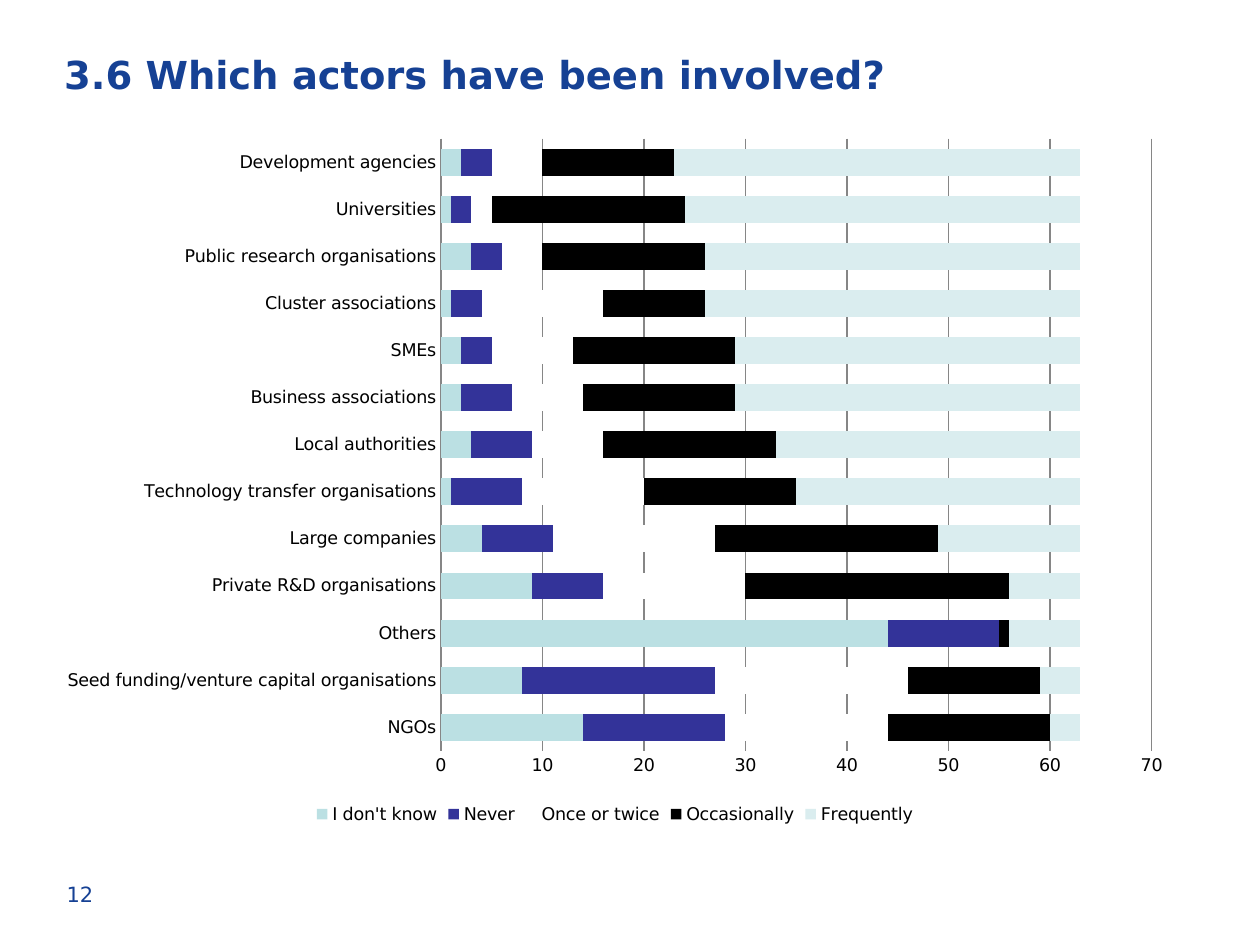
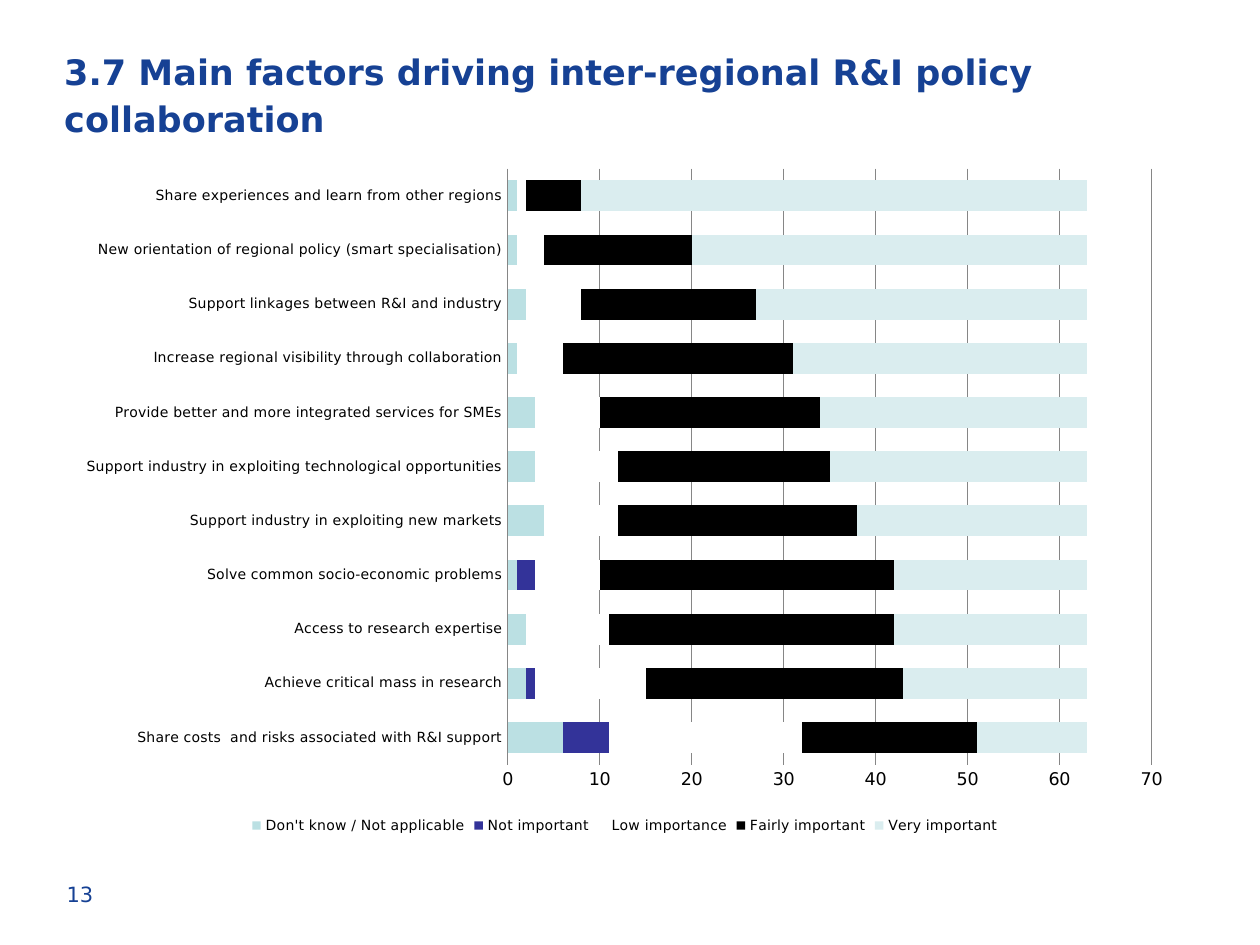
"""Build two survey slides with stacked bar charts on actors and policy drivers."""
from dataclasses import dataclass

import lxml.etree
import pptx
import pptx.chart.data
import pptx.dml.color
import pptx.enum.chart
import pptx.enum.text
import pptx.oxml
import pptx.oxml.ns
import pptx.util

Inches = pptx.util.Inches
Pt = pptx.util.Pt
RGB = pptx.dml.color.RGBColor.from_string


@dataclass(frozen=True)
class Theme:
    font: str = "DejaVu Sans"
    heading: str = "164194"
    text: str = "000000"
    grid: str = "868686"
    answers: tuple = ("BBE0E3", "333399", "FFFFFF", "000000", "DAEDEF")
    number_size: int = 12
    chart_size: int = 10


theme = Theme()


def write(shape, text, size, bold=False, line_spacing=None, side_inset=0,
          anchor=pptx.enum.text.MSO_ANCHOR.TOP):
    frame = shape.text_frame
    frame.word_wrap = True
    frame.auto_size = pptx.enum.text.MSO_AUTO_SIZE.NONE
    frame.vertical_anchor = anchor
    frame.margin_left = frame.margin_right = Inches(side_inset)
    frame.margin_top = frame.margin_bottom = 0
    paragraph = frame.paragraphs[0]
    paragraph.alignment = pptx.enum.text.PP_ALIGN.LEFT
    paragraph.line_spacing = line_spacing
    run = paragraph.add_run()
    run.text = text
    run.font.name = theme.font
    run.font.size = Pt(size)
    run.font.bold = bold
    run.font.color.rgb = RGB(theme.heading)


questions = [
    dict(
        number="12",
        title="3.6 Which actors have been involved?",
        title_size=22,
        label_size=10,
        frame=(0.35, 0.99, 9.06, 5.59),
        plot=(3.5, 1.1, 5.64, 4.86),
        answers=["I don't know", "Never", "Once or twice", "Occasionally", "Frequently"],
        rows=[
            ("NGOs", 14, 14, 16, 16, 3),
            ("Seed funding/venture capital organisations", 8, 19, 19, 13, 4),
            ("Others", 44, 11, None, 1, 7),
            ("Private R&D organisations", 9, 7, 14, 26, 7),
            ("Large companies", 4, 7, 16, 22, 14),
            ("Technology transfer organisations", 1, 7, 12, 15, 28),
            ("Local authorities", 3, 6, 7, 17, 30),
            ("Business associations", 2, 5, 7, 15, 34),
            ("SMEs", 2, 3, 8, 16, 34),
            ("Cluster associations", 1, 3, 12, 10, 37),
            ("Public research organisations", 3, 3, 4, 16, 37),
            ("Universities", 1, 2, 2, 19, 39),
            ("Development agencies", 2, 3, 5, 13, 40),
        ],
    ),
    dict(
        number="13",
        title="3.7 Main factors driving inter-regional R&I policy collaboration",
        title_size=20,
        label_size=8,
        frame=(0.51, 1.23, 8.9, 5.43),
        plot=(4.03, 1.34, 5.11, 4.73),
        answers=["Don't know / Not applicable", "Not important", "Low importance",
                 "Fairly important", "Very important"],
        rows=[
            ("Share costs  and risks associated with R&I support", 6, 5, 21, 19, 12),
            ("Achieve critical mass in research", 2, 1, 12, 28, 20),
            ("Access to research expertise", 2, None, 9, 31, 21),
            ("Solve common socio-economic problems", 1, 2, 7, 32, 21),
            ("Support industry in exploiting new markets", 4, None, 8, 26, 25),
            ("Support industry in exploiting technological opportunities", 3, None, 9, 23, 28),
            ("Provide better and more integrated services for SMEs", 3, None, 7, 24, 29),
            ("Increase regional visibility through collaboration", 1, None, 5, 25, 32),
            ("Support linkages between R&I and industry", 2, None, 6, 19, 36),
            ("New orientation of regional policy (smart specialisation)", 1, None, 3, 16, 43),
            ("Share experiences and learn from other regions", 1, None, 1, 6, 55),
        ],
    ),
]

deck = pptx.Presentation()
deck.slide_width = Inches(10)
deck.slide_height = Inches(7.5)
title_only = deck.slide_layouts[5]

for question in questions:
    slide = deck.slides.add_slide(title_only)

    heading = slide.shapes.title
    heading.left, heading.top = Inches(0.51), Inches(0.37)
    heading.width, heading.height = Inches(8.98), Inches(0.71)
    write(heading, question["title"], question["title_size"], bold=True, line_spacing=1.1)

    page_number = slide.shapes.add_textbox(Inches(0.43), Inches(6.9), Inches(2.33), Inches(0.4))
    write(page_number, question["number"], theme.number_size, side_inset=0.1,
          anchor=pptx.enum.text.MSO_ANCHOR.MIDDLE)

    labels, *counts = zip(*question["rows"])
    responses = pptx.chart.data.CategoryChartData()
    responses.categories = labels
    for answer, values in zip(question["answers"], counts):
        responses.add_series(answer, values)

    chart = slide.shapes.add_chart(
        pptx.enum.chart.XL_CHART_TYPE.BAR_STACKED,
        *map(Inches, question["frame"]), responses).chart
    chart.has_title = False
    chart.font.name = theme.font
    chart.font.size = Pt(theme.chart_size)
    chart.font.color.rgb = RGB(theme.text)

    bars = chart.plots[0]
    bars.gap_width = 75
    bars.overlap = 100
    bars.vary_by_categories = False
    for series, colour in zip(bars.series, theme.answers):
        series.format.fill.solid()
        series.format.fill.fore_color.rgb = RGB(colour)
        series.invert_if_negative = False

    actors, scale = chart.category_axis, chart.value_axis
    for axis in (actors, scale):
        axis.major_tick_mark = pptx.enum.chart.XL_TICK_MARK.NONE
        axis.minor_tick_mark = pptx.enum.chart.XL_TICK_MARK.NONE
    actors.tick_labels.font.size = Pt(question["label_size"])
    scale.minimum_scale, scale.maximum_scale, scale.major_unit = 0, 70, 10
    scale.format.line.fill.background()
    scale.has_major_gridlines = True
    for line in (actors.format.line, scale.major_gridlines.format.line):
        line.color.rgb = RGB(theme.grid)
        line.width = Pt(0.75)

    chart.has_legend = True
    chart.legend.position = pptx.enum.chart.XL_LEGEND_POSITION.BOTTOM
    chart.legend.include_in_layout = False
    chart.legend.font.size = Pt(question["label_size"])

    left, top, width, height = question["frame"]
    plot_left, plot_top, plot_width, plot_height = question["plot"]
    qn = pptx.oxml.ns.qn
    plot_area = chart.element.find(".//" + qn("c:plotArea"))
    for automatic in plot_area.findall(qn("c:layout")):
        plot_area.remove(automatic)
    layout = pptx.oxml.parse_xml(f"<c:layout {pptx.oxml.ns.nsdecls('c')}><c:manualLayout/></c:layout>")
    plot_area.insert(0, layout)
    for tag, value in (
        ("layoutTarget", "inner"), ("xMode", "edge"), ("yMode", "edge"),
        ("x", (plot_left - left) / width), ("y", (plot_top - top) / height),
        ("w", plot_width / width), ("h", plot_height / height),
    ):
        lxml.etree.SubElement(layout[0], qn("c:" + tag)).set("val", str(value))

deck.save("out.pptx")
